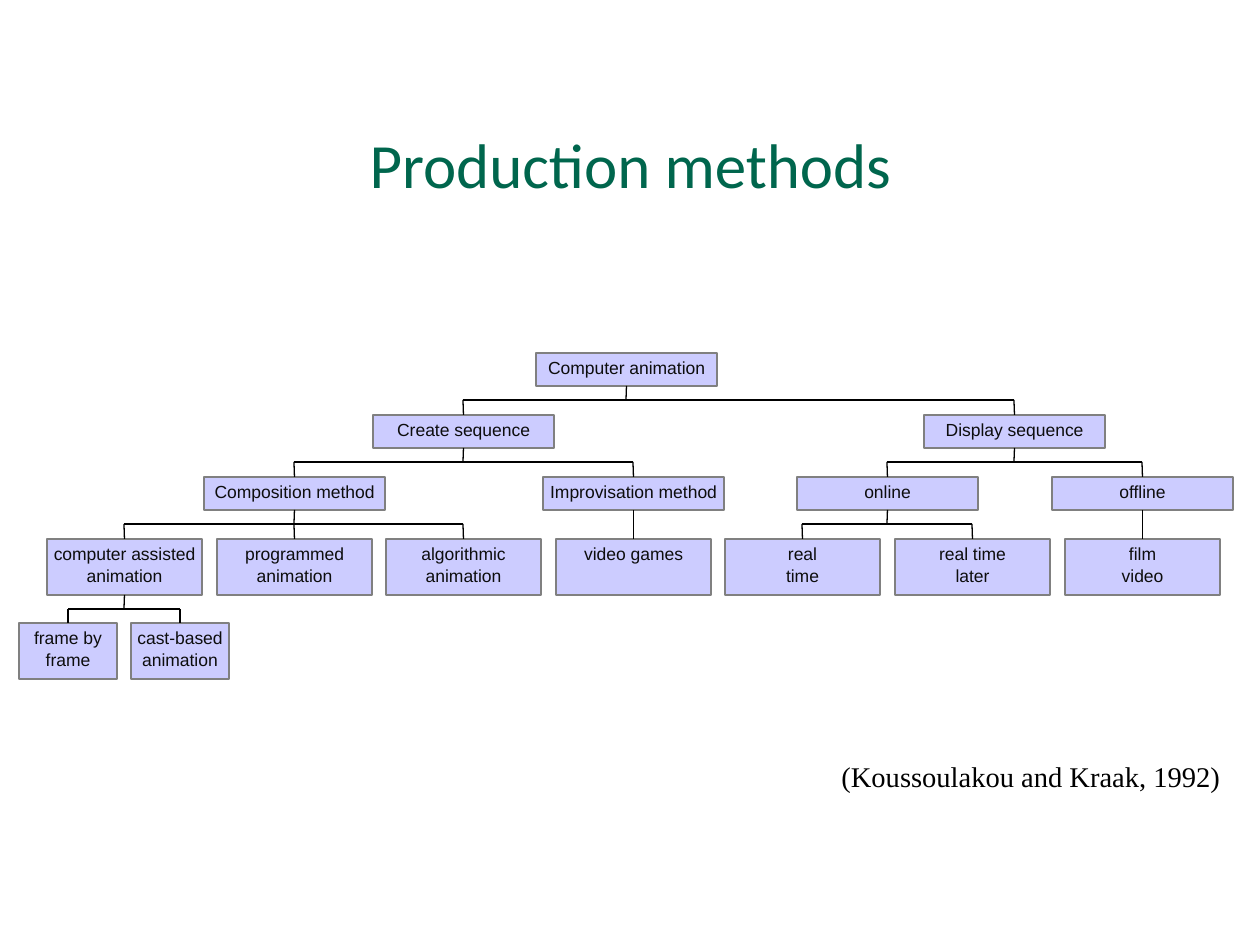
from dataclasses import dataclass

from lxml.etree import SubElement
from pptx import Presentation
from pptx.dml.color import RGBColor
from pptx.enum.shapes import MSO_CONNECTOR, MSO_SHAPE
from pptx.enum.text import MSO_ANCHOR, PP_ALIGN
from pptx.oxml.ns import qn
from pptx.shapes.autoshape import Shape
from pptx.shapes.connector import Connector
from pptx.slide import Slide
from pptx.text.text import TextFrame
from pptx.util import Emu, Inches, Pt

PX_PER_INCH = 126


def px(length: int) -> Emu:
    return Emu(round(length * Inches(1) / PX_PER_INCH))


@dataclass(frozen=True)
class Theme:
    title_color: RGBColor = RGBColor(0x00, 0x66, 0x4D)
    label_color: RGBColor = RGBColor(0x0D, 0x0D, 0x0D)
    box_fill: RGBColor = RGBColor(0xCC, 0xCC, 0xFF)
    box_line: RGBColor = RGBColor(0x80, 0x80, 0x80)
    black: RGBColor = RGBColor(0x00, 0x00, 0x00)
    title_size: Pt = Pt(36)
    label_size: Pt = Pt(10)
    label_pitch: Pt = Pt(12.6)
    citation_size: Pt = Pt(16.3)
    line_width: Pt = Pt(0.75)


@dataclass(frozen=True)
class Level:
    top: int
    width: int
    height: int


@dataclass(frozen=True)
class Node:
    label: str
    center: int
    children: tuple["Node", ...] = ()


THEME = Theme()
LEVELS = (
    Level(353, 181, 33),
    Level(415, 181, 33),
    Level(477, 181, 33),
    Level(539, 155, 56),
    Level(623, 98, 56),
)


def column(position: float) -> int:
    """Center of a column in the evenly spaced row of methods."""
    return round(124 + 169.6 * position)


# Tree of methods, from the root down
COMPOSITION = Node("Composition method", column(1), (
    Node("computer assisted\nanimation", column(0), (
        Node("frame by\nframe", column(0) - 56),
        Node("cast-based\nanimation", column(0) + 56),
    )),
    Node("programmed\nanimation", column(1)),
    Node("algorithmic\nanimation", column(2)),
))
IMPROVISATION = Node("Improvisation method", column(3), (Node("video games", column(3)),))
ONLINE = Node("online", column(4.5), (
    Node("real\ntime", column(4)),
    Node("real time\nlater", column(5)),
))
OFFLINE = Node("offline", column(6), (Node("film\nvideo", column(6)),))
TREE = Node("Computer animation", 626, (
    Node("Create sequence", column(2), (COMPOSITION, IMPROVISATION)),
    Node("Display sequence", column(5.25), (ONLINE, OFFLINE)),
))


def style_text(frame: TextFrame, font: str, size: Pt, color: RGBColor) -> None:
    for para in frame.paragraphs:
        for span in para.runs:
            span.font.name = font
            span.font.size = size
            span.font.color.rgb = color


def add_box(page: Slide, node: Node, level: Level) -> Shape:
    left = node.center - level.width // 2
    box = page.shapes.add_shape(
        MSO_SHAPE.RECTANGLE, px(left), px(level.top), px(level.width), px(level.height))
    box.shadow.inherit = False
    box.fill.solid()
    box.fill.fore_color.rgb = THEME.box_fill
    box.line.color.rgb = THEME.box_line
    box.line.width = THEME.line_width
    frame = box.text_frame
    frame.text = node.label
    frame.word_wrap = False
    frame.vertical_anchor = MSO_ANCHOR.TOP
    frame.margin_left = frame.margin_right = frame.margin_bottom = 0
    frame.margin_top = px(3)
    for para in frame.paragraphs:
        para.alignment = PP_ALIGN.CENTER
        para.line_spacing = THEME.label_pitch
    style_text(frame, "Arial", THEME.label_size, THEME.label_color)
    return box


def add_line(page: Slide, x1: int, y1: int, x2: int, y2: int) -> Connector:
    line = page.shapes.add_connector(
        MSO_CONNECTOR.STRAIGHT, px(x1), px(y1), px(x2), px(y2))
    line.line.color.rgb = THEME.black
    line.line.width = THEME.line_width
    SubElement(line._element.spPr, qn("a:effectLst"))
    return line


def draw_branch(page: Slide, node: Node, depth: int = 0) -> Shape:
    """Draw a node, everything below it and the lines between them."""
    level = LEVELS[depth]
    box = add_box(page, node, level)
    if not node.children:
        return box
    bottom, child_top = level.top + level.height, LEVELS[depth + 1].top
    child_boxes = [draw_branch(page, child, depth + 1) for child in node.children]

    # An only child hangs on one line
    if len(child_boxes) == 1:
        line = add_line(page, node.center, bottom, node.center, child_top)
        line.begin_connect(box, 2)
        line.end_connect(child_boxes[0], 0)
        return box

    # Several children share a stem and a crossbar
    bar = (bottom + child_top) // 2
    add_line(page, node.center, bottom, node.center, bar).begin_connect(box, 2)
    for child, child_box in zip(node.children, child_boxes):
        if child.center != node.center:
            add_line(page, node.center, bar, child.center, bar)
        add_line(page, child.center, bar, child.center, child_top).end_connect(child_box, 0)
    return box


def add_title(page: Slide) -> None:
    title = page.shapes.title
    title.left, title.top, title.width, title.height = px(95), px(84), px(1071), px(158)
    frame = title.text_frame
    frame.text = "Production methods"
    frame.vertical_anchor = MSO_ANCHOR.MIDDLE
    frame.paragraphs[0].alignment = PP_ALIGN.CENTER
    style_text(frame, "Calibri", THEME.title_size, THEME.title_color)


def add_citation(page: Slide) -> None:
    box = page.shapes.add_textbox(px(829), px(756), px(408), px(45))
    frame = box.text_frame
    frame.text = "(Koussoulakou and Kraak, 1992)"
    frame.word_wrap = False
    frame.paragraphs[0].line_spacing = 0.94
    style_text(frame, "Times New Roman", THEME.citation_size, THEME.black)


def main() -> None:
    deck = Presentation()
    deck.slide_width, deck.slide_height = px(1260), px(945)
    page = deck.slides.add_slide(deck.slide_layouts[5])
    add_title(page)
    draw_branch(page, TREE)
    add_citation(page)
    deck.save("out.pptx")


if __name__ == "__main__":
    main()
